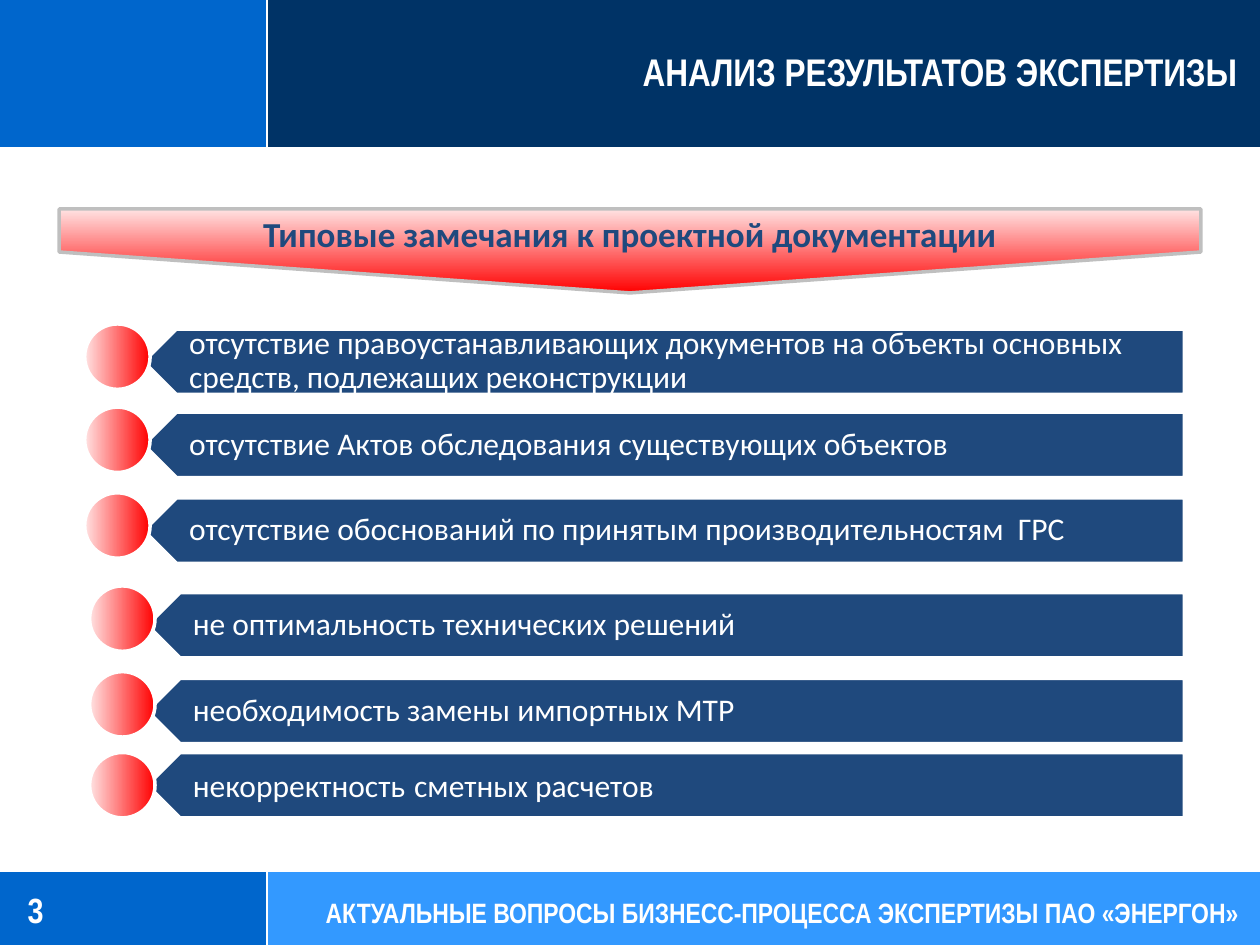
from lxml.etree import SubElement
from pptx import Presentation
from pptx.dml.color import RGBColor
from pptx.enum.shapes import MSO_CONNECTOR, MSO_SHAPE
from pptx.enum.text import MSO_ANCHOR, PP_ALIGN
from pptx.oxml.ns import qn
from pptx.util import Pt

COLORS = {
    "white": "FFFFFF",
    "blue": "0066CC",
    "sky": "3399FF",
    "navy": "003366",
    "bar": "1F497D",
    "red": "FF0000",
    "pink": "FFE3E3",
    "gray": "BFBFBF",
}
SLIDE_W, SLIDE_H = 720, 540
SPLIT_X, HEADER_H, FOOTER_Y = 152.8, 84.7, 497.5
BAR_RIGHT, BAR_H = 676.8, 37.4
TEXT_INDENT = 9.4

HEADING = {"name": "Arial Narrow", "bold": True}
BODY = {"name": "Calibri", "bold": False}
NO_MARGINS = (0, 0, 0, 0)
BAR_MARGINS = (16.6, 5, 10, 5)

REMARKS = [
    (82.1, 188, 48.4, 185.1, [
        ("отсутствие правоустанавливающих документов на объекты основных "
         "средств, подлежащих реконструкции", 18)]),
    (82.1, 235.5, 48.4, 232.6, [
        ("отсутствие Актов обследования существующих объектов", 18)]),
    (82.1, 284.5, 48.4, 281.6, [
        ("отсутствие обоснований по принятым производительностям  ГРС", 18)]),
    (84.2, 338.6, 51.2, 334.8, [
        ("не оптимальность технических решений", 18)]),
    (84.2, 387.6, 51.2, 383.8, [
        ("необходимость замены импортных МТР", 18)]),
    (84.2, 430, 51.2, 430, [
        ("некорректность", 18), (" ", 22), ("сметных расчетов", 18)]),
]


def color(key):
    return RGBColor.from_string(COLORS[key])


def apply_format(target, values):
    for attribute, value in values.items():
        setattr(target, attribute, value)


def add_block(slide, preset, box, fill, line=None):
    block = slide.shapes.add_shape(preset, *map(Pt, box))
    block.shadow.inherit = False
    if fill:
        block.fill.solid()
        block.fill.fore_color.rgb = color(fill)
    if line:
        block.line.color.rgb = color(line)
        block.line.width = Pt(2)
    else:
        block.line.fill.background()
    return block


def add_glow(slide, preset, box, line, angle):
    block = add_block(slide, preset, box, None, line)
    block.fill.gradient()
    block.fill.gradient_angle = angle
    for stop, key in zip(block.fill.gradient_stops, ("red", "pink")):
        stop.color.rgb = color(key)
    return block


def add_rule(slide, x1, y1, x2, y2):
    rule = slide.shapes.add_connector(
        MSO_CONNECTOR.STRAIGHT, *map(Pt, (x1, y1, x2, y2)))
    rule.line.color.rgb = color("white")
    rule.line.width = Pt(1.25)
    SubElement(rule._element.spPr, qn("a:effectLst"))


def write(holder, runs, font, ink="white", margins=NO_MARGINS,
          anchor=MSO_ANCHOR.MIDDLE, align=PP_ALIGN.LEFT, spacing=1.0):
    left, top, right, bottom = map(Pt, margins)
    apply_format(holder.text_frame, {
        "word_wrap": True,
        "vertical_anchor": anchor,
        "margin_left": left,
        "margin_top": top,
        "margin_right": right,
        "margin_bottom": bottom,
    })
    paragraph = holder.text_frame.paragraphs[0]
    apply_format(paragraph, {"alignment": align, "line_spacing": spacing})
    for text, size in runs:
        run = paragraph.add_run()
        run.text = text
        apply_format(run.font, {**font, "size": Pt(size)})
        run.font.color.rgb = color(ink)


def add_label(slide, box, runs, font, **layout):
    write(slide.shapes.add_textbox(*map(Pt, box)), runs, font, **layout)


def add_frame(slide):
    right_w, footer_h = SLIDE_W - SPLIT_X, SLIDE_H - FOOTER_Y
    for top, height, main_fill in ((FOOTER_Y, footer_h, "sky"),
                                   (0, HEADER_H, "navy")):
        add_block(slide, MSO_SHAPE.RECTANGLE, (0, top, SPLIT_X, height), "blue")
        add_block(slide, MSO_SHAPE.RECTANGLE,
                  (SPLIT_X, top, right_w, height), main_fill)
        add_rule(slide, SPLIT_X, top, SPLIT_X, top + height)
    for y in (FOOTER_Y, HEADER_H):
        add_rule(slide, 0, y, SLIDE_W, y)


def add_banner(slide):
    banner = add_glow(slide, MSO_SHAPE.DOWN_ARROW,
                      (33.8, 119.4, 652.4, 48), "gray", 90)
    banner.adjustments[0] = 1
    banner.adjustments[1] = 0.487
    write(banner, [("Типовые замечания к проектной документации", 20)],
          {**BODY, "bold": True}, ink="bar", margins=(0, 3, 0, 0),
          align=PP_ALIGN.CENTER)


def add_remark(slide, left, top, ball_left, ball_top, runs):
    bar = add_block(slide, MSO_SHAPE.PENTAGON,
                    (left, top, BAR_RIGHT - left, BAR_H), "bar", "white")
    bar.rotation = 180
    text_left = left + TEXT_INDENT
    add_label(slide, (text_left, top, BAR_RIGHT - text_left, BAR_H), runs,
              BODY, margins=BAR_MARGINS, spacing=0.9)
    add_glow(slide, MSO_SHAPE.OVAL,
             (ball_left, ball_top, BAR_H, BAR_H), "white", 180)


def main():
    deck = Presentation()
    deck.slide_width, deck.slide_height = Pt(SLIDE_W), Pt(SLIDE_H)
    slide = deck.slides.add_slide(deck.slide_layouts[6])

    add_frame(slide)
    add_label(slide, (169.9, 0, 537.1, 54),
              [("АНАЛИЗ РЕЗУЛЬТАТОВ ЭКСПЕРТИЗЫ", 22)], HEADING,
              anchor=MSO_ANCHOR.BOTTOM, align=PP_ALIGN.RIGHT)
    add_label(slide, (15.8, 501.1, 117.4, 37.4), [("3", 20)], HEADING)
    add_banner(slide)
    for remark in REMARKS:
        add_remark(slide, *remark)
    add_label(slide, (180.7, 502.6, 532.8, 37.4),
              [("АКТУАЛЬНЫЕ ВОПРОСЫ БИЗНЕСС-ПРОЦЕССА ЭКСПЕРТИЗЫ "
                "ПАО «ЭНЕРГОН»", 16)], HEADING, align=PP_ALIGN.CENTER)
    deck.save("out.pptx")


if __name__ == "__main__":
    main()
